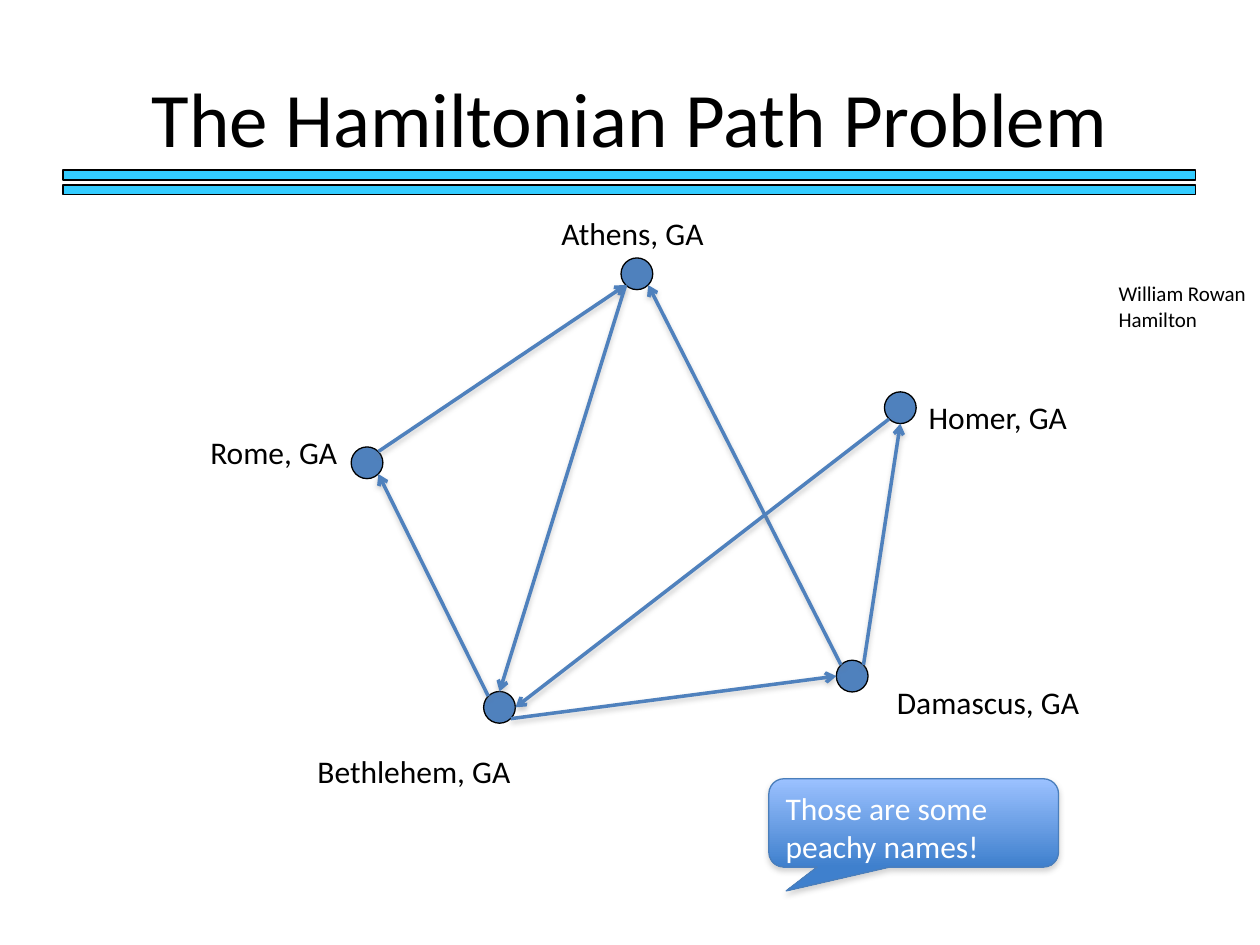
from dataclasses import dataclass

from lxml import etree
from pptx import Presentation
from pptx.dml.color import RGBColor
from pptx.enum.shapes import MSO_CONNECTOR, MSO_SHAPE
from pptx.enum.text import MSO_ANCHOR, PP_ALIGN
from pptx.oxml.ns import qn
from pptx.util import Cm, Pt

RECTANGLE = MSO_SHAPE.RECTANGLE
OVAL = MSO_SHAPE.OVAL
CALLOUT = MSO_SHAPE.ROUNDED_RECTANGULAR_CALLOUT
STRAIGHT = MSO_CONNECTOR.STRAIGHT
LEFT, CENTER = PP_ALIGN.LEFT, PP_ALIGN.CENTER
TOP, MIDDLE = MSO_ANCHOR.TOP, MSO_ANCHOR.MIDDLE

NODE_SIZE = 0.64
COMPASS = {"N": (0, -1), "S": (0, 1), "E": (1, 0), "W": (-1, 0),
           "NE": (0.71, -0.71), "NW": (-0.71, -0.71),
           "SE": (0.71, 0.71), "SW": (-0.71, 0.71)}

CITIES = {
    "Rome": ((7.4, 9.33), (3.99, 8.61, 3.1)),
    "Athens": ((12.84, 5.52), (11.07, 4.19, 3.4)),
    "Homer": ((18.15, 8.22), (18.47, 7.9, 3.33)),
    "Damascus": ((17.18, 13.63), (17.83, 13.64, 4.22)),
    "Bethlehem": ((10.07, 14.26), (6.15, 15.04, 4.45)),
}
ROADS = [
    ("Rome", "NE", "Athens", "SW"),
    ("Athens", "SW", "Bethlehem", "N"),
    ("Bethlehem", "SE", "Damascus", "W"),
    ("Damascus", "NE", "Homer", "S"),
    ("Damascus", "NW", "Athens", "SE"),
    ("Homer", "SW", "Bethlehem", "E"),
    ("Bethlehem", "NW", "Rome", "SE"),
]


@dataclass(frozen=True)
class Theme:
    font: str = "Calibri"
    ink: str = "000000"
    light: str = "FFFFFF"
    bar: str = "33CCFF"
    node: str = "4F81BD"
    callout_line: str = "4A7EBB"
    callout_fill: tuple = ("9BC1FF", "3F80CD")
    shadow: str = "808080"
    title: int = 44
    body: int = 18
    small: int = 12
    thin: float = 0.75
    road: float = 2


class SlideBuilder:
    def __init__(self, page, theme):
        self.page = page
        self.theme = theme

    def apply(self, target, values):
        for name, value in values.items():
            setattr(target, name, value)

    def fill_text(self, box, lines, size, color, align=LEFT, anchor=TOP, wrap=True):
        frame = box.text_frame
        self.apply(frame, {"word_wrap": wrap, "vertical_anchor": anchor})
        for index, line in enumerate(lines):
            para = frame.add_paragraph() if index else frame.paragraphs[0]
            para.alignment = align
            span = para.add_run()
            span.text = line
            self.apply(span.font, {"name": self.theme.font, "size": Pt(size)})
            span.font.color.rgb = RGBColor.from_string(color)

    def text(self, bounds, lines, size, **layout):
        box = self.page.shapes.add_textbox(*map(Cm, bounds))
        self.fill_text(box, lines, size, self.theme.ink, **layout)

    def outline(self, item, color, width):
        item.line.color.rgb = RGBColor.from_string(color)
        item.line.width = Pt(width)

    def shape(self, kind, bounds, fill, parent=None):
        shapes = (parent or self.page).shapes
        shape = shapes.add_shape(kind, *map(Cm, bounds))
        shape.shadow.inherit = False
        shape.fill.solid()
        shape.fill.fore_color.rgb = RGBColor.from_string(fill)
        self.outline(shape, self.theme.ink, self.theme.thin)
        return shape

    def shadow(self, item, blur, distance, opacity):
        properties = item.element.spPr
        for old in properties.findall(qn("a:effectLst")):
            properties.remove(old)
        effects = etree.SubElement(properties, qn("a:effectLst"))
        outer = etree.SubElement(effects, qn("a:outerShdw"), {
            "blurRad": str(Pt(blur)), "dist": str(Pt(distance)),
            "dir": "5400000", "rotWithShape": "0"})
        color = etree.SubElement(outer, qn("a:srgbClr"), val=self.theme.shadow)
        etree.SubElement(color, qn("a:alpha"), val=str(opacity * 1000))

    def bars(self, left, tops, width, height):
        group = self.page.shapes.add_group_shape()
        for top in tops:
            self.shape(RECTANGLE, (left, top, width, height), self.theme.bar, group)

    def node(self, center):
        corner = [value - NODE_SIZE / 2 for value in center]
        self.shape(OVAL, (*corner, NODE_SIZE, NODE_SIZE), self.theme.node)

    def arrow(self, start, end):
        road = self.page.shapes.add_connector(STRAIGHT, *map(Cm, (*start, *end)))
        self.outline(road, self.theme.node, self.theme.road)
        stroke = road.element.spPr.find(qn("a:ln"))
        etree.SubElement(stroke, qn("a:tailEnd"), type="arrow")
        self.shadow(road, 3.1, 1.6, 38)

    def callout(self, bounds, line, adjustments):
        bubble = self.shape(CALLOUT, bounds, self.theme.node)
        for index, value in enumerate(adjustments):
            bubble.adjustments[index] = value
        bubble.fill.gradient()
        bubble.fill.gradient_angle = 270
        stops = zip(bubble.fill.gradient_stops, self.theme.callout_fill, (0, 1))
        for stop, color, position in stops:
            stop.color.rgb = RGBColor.from_string(color)
            stop.position = position
        self.outline(bubble, self.theme.callout_line, self.theme.thin)
        self.shadow(bubble, 3.1, 1.8, 35)
        self.fill_text(bubble, [line], self.theme.body, self.theme.light)


def rim_point(city, side):
    center = CITIES[city][0]
    return [c + d * NODE_SIZE / 2 for c, d in zip(center, COMPASS[side])]


def main():
    deck = Presentation()
    deck.slide_width, deck.slide_height = Cm(25.4), Cm(19.05)
    page = deck.slides.add_slide(deck.slide_layouts[6])
    theme = Theme()
    builder = SlideBuilder(page, theme)

    builder.text((1.27, 0.76, 22.86, 3.18), ["The Hamiltonian Path Problem"],
                 theme.title, align=CENTER, anchor=MIDDLE)
    builder.bars(1.27, (3.43, 3.73), 22.83, 0.2)

    for center, _ in CITIES.values():
        builder.node(center)
    for origin, leave, target, arrive in ROADS:
        builder.arrow(rim_point(origin, leave), rim_point(target, arrive))
    for city, (_, label) in CITIES.items():
        builder.text((*label, 1.02), [f"{city}, GA"], theme.body, wrap=False)

    builder.callout((15.5, 15.7, 5.84, 1.78), "Those are some peachy names!",
                    (-0.44, 0.77, 0.17))
    builder.text((22.3, 5.54, 3.1, 1.3), ["William Rowan", "Hamilton"],
                 theme.small, wrap=False)
    deck.save("out.pptx")


if __name__ == "__main__":
    main()
